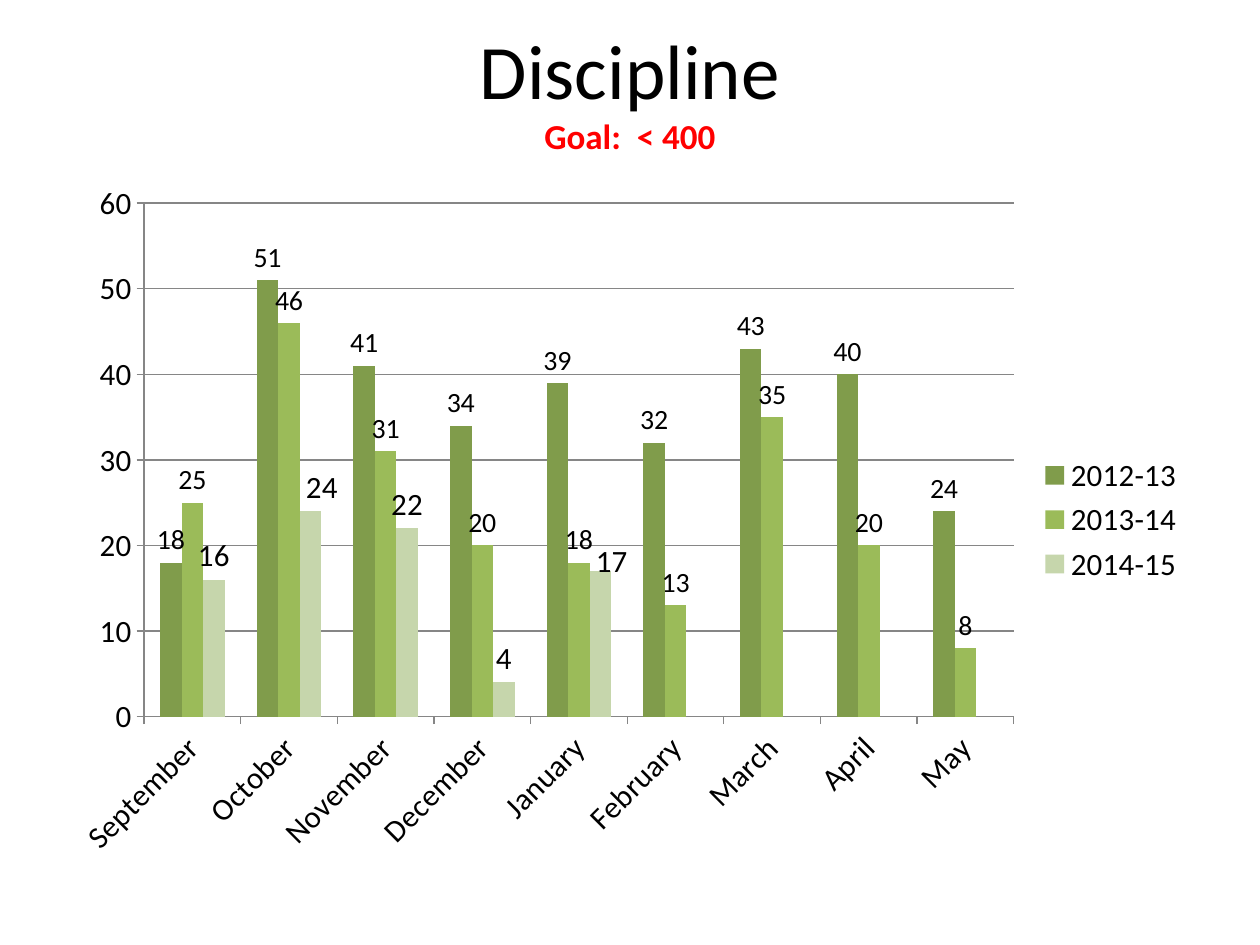
from dataclasses import dataclass

from lxml.etree import SubElement
from pptx import Presentation
from pptx.chart.data import CategoryChartData
from pptx.chart.series import BarSeries
from pptx.dml.color import RGBColor
from pptx.enum.chart import (XL_CHART_TYPE, XL_LABEL_POSITION,
                             XL_LEGEND_POSITION, XL_TICK_MARK)
from pptx.enum.text import MSO_ANCHOR, PP_ALIGN
from pptx.oxml.ns import qn
from pptx.util import Pt

FONT = "Calibri"
COLORS = {"text": "000000", "goal": "FF0000", "axis": "868686",
          "dark": "809C4B", "mid": "9BBB59", "light": "C6D6AC"}
MONTHS = ["September", "October", "November", "December", "January",
          "February", "March", "April", "May"]


@dataclass
class Year:
    name: str
    values: list
    color: str
    label_size: float


YEARS = [
    Year("2012-13", [18, 51, 41, 34, 39, 32, 43, 40, 24], "dark", 15.9),
    Year("2013-14", [25, 46, 31, 20, 18, 13, 35, 20, 8], "mid", 15.9),
    Year("2014-15", [16, 24, 22, 4, 17] + [None] * 4, "light", 17.7),
]
# Nudged labels of the last year: month index -> offset as a share of the chart
LABEL_SHIFTS = {1: (0.01, 0), 4: (0.01, 0.02)}


def rgb(name: str) -> RGBColor:
    return RGBColor.from_string(COLORS[name])


def add_run(p, text: str, size: float, color: str, bold: bool = False) -> None:
    r = p.add_run()
    r.text = text
    r.font.name, r.font.size, r.font.bold = FONT, Pt(size), bold
    r.font.color.rgb = rgb(color)


def add_manual_layout(layout, **settings) -> None:
    """Write a manual layout, one child per setting, in the order given."""
    manual = SubElement(layout, qn("c:manualLayout"))
    for tag, value in settings.items():
        SubElement(manual, qn(f"c:{tag}")).set("val", str(value))


def format_axis(axis) -> None:
    axis.major_tick_mark = XL_TICK_MARK.OUTSIDE
    axis.minor_tick_mark = XL_TICK_MARK.NONE
    axis.format.line.color.rgb = rgb("axis")
    axis.format.line.width = Pt(0.75)


def format_series(series: BarSeries, year: Year) -> None:
    series.format.fill.solid()
    series.format.fill.fore_color.rgb = rgb(year.color)
    series.invert_if_negative = False
    labels = series.data_labels
    labels.show_value = True
    labels.position = XL_LABEL_POSITION.OUTSIDE_END
    labels.font.size = Pt(year.label_size)
    labels.font.name = FONT
    labels.font.color.rgb = rgb("text")


def shift_label(series: BarSeries, index: int, x: float, y: float) -> None:
    series.points[index].data_label.position = XL_LABEL_POSITION.OUTSIDE_END
    idx = series._element.xpath(f"c:dLbls/c:dLbl/c:idx[@val='{index}']")[0]
    layout = SubElement(idx.getparent(), qn("c:layout"))
    idx.addnext(layout)
    add_manual_layout(layout, x=x, y=y)


def add_title(s) -> None:
    sp = s.shapes.title
    sp.left, sp.top, sp.width, sp.height = Pt(36), Pt(6), Pt(648), Pt(90)
    tf = sp.text_frame
    tf.vertical_anchor = MSO_ANCHOR.MIDDLE
    p = tf.paragraphs[0]
    p.alignment = PP_ALIGN.CENTER
    add_run(p, "Discipline", 44, "text")
    p.add_line_break()
    add_run(p, "Goal:  < 400", 20, "goal", bold=True)


def add_discipline_chart(s) -> None:
    data = CategoryChartData()
    data.categories = MONTHS
    for year in YEARS:
        data.add_series(year.name, year.values)
    chart = s.shapes.add_chart(XL_CHART_TYPE.COLUMN_CLUSTERED, Pt(30), Pt(96),
                               Pt(654), Pt(402), data).chart
    chart.has_title = False
    chart.font.name, chart.font.size = FONT, Pt(17.7)
    chart.font.color.rgb = rgb("text")
    chart.has_legend = True
    chart.legend.position = XL_LEGEND_POSITION.RIGHT
    chart.legend.include_in_layout = False

    value_axis = chart.value_axis
    for axis in (chart.category_axis, value_axis):
        format_axis(axis)
    value_axis.minimum_scale, value_axis.maximum_scale = 0, 60
    value_axis.major_unit = 10
    grid = value_axis.major_gridlines.format.line
    grid.color.rgb, grid.width = rgb("axis"), Pt(0.75)

    plot = chart.plots[0]
    plot.gap_width, plot.overlap = 150, 0
    plot.vary_by_categories = False
    for series, year in zip(plot.series, YEARS):
        format_series(series, year)
    for index, (x, y) in LABEL_SHIFTS.items():
        shift_label(plot.series[-1], index, x, y)

    area = chart._chartSpace.chart.plotArea
    layout = area.find(qn("c:layout"))
    if layout is None:
        layout = SubElement(area, qn("c:layout"))
        area.insert(0, layout)
    add_manual_layout(layout, layoutTarget="inner", xMode="edge", yMode="edge",
                      x=0.08, y=0.05, w=0.76, h=0.73)


def main() -> None:
    prs = Presentation()
    prs.slide_width, prs.slide_height = Pt(720), Pt(540)
    s = prs.slides.add_slide(prs.slide_layouts[5])
    add_title(s)
    add_discipline_chart(s)
    prs.save("out.pptx")


if __name__ == "__main__":
    main()
